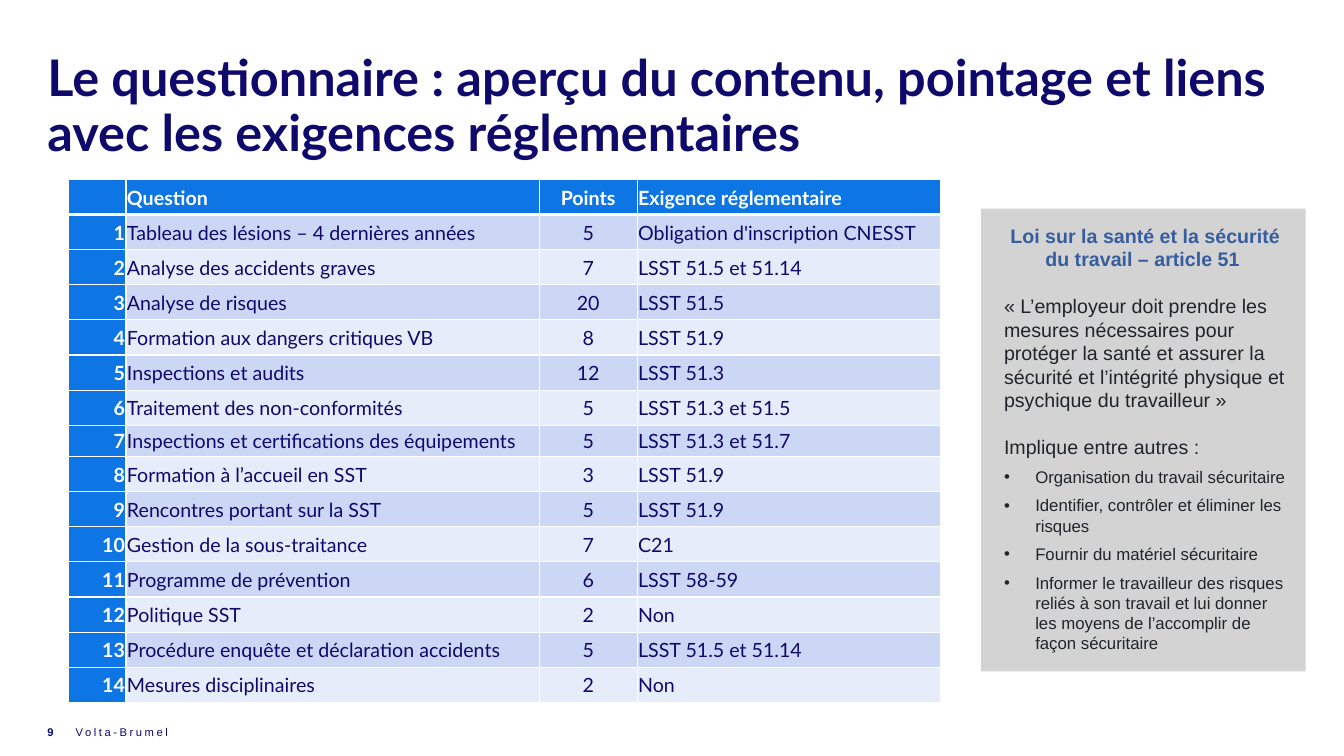
from dataclasses import dataclass
from typing import NamedTuple

from lxml import etree
from pptx import Presentation
from pptx.dml.color import RGBColor
from pptx.enum.shapes import MSO_SHAPE
from pptx.enum.text import MSO_ANCHOR, PP_ALIGN
from pptx.oxml.ns import qn
from pptx.util import Inches, Pt

NAVY = RGBColor(0x0F, 0x09, 0x6C)
BLUE = RGBColor(0x0E, 0x75, 0xE5)
BAND_DARK = RGBColor(0xCC, 0xD6, 0xF5)
BAND_LIGHT = RGBColor(0xE7, 0xEC, 0xFA)
WHITE = RGBColor(0xFF, 0xFF, 0xFF)
GREY = RGBColor(0xD3, 0xD3, 0xD3)
LAW_BLUE = RGBColor(0x37, 0x5D, 0x9D)
INK = RGBColor(0x21, 0x25, 0x29)
LEFT, CENTER, RIGHT = PP_ALIGN.LEFT, PP_ALIGN.CENTER, PP_ALIGN.RIGHT
TOP, MIDDLE = MSO_ANCHOR.TOP, MSO_ANCHOR.MIDDLE
RECTANGLE = MSO_SHAPE.RECTANGLE


class Question(NamedTuple):
    title: str
    points: int
    requirement: str


@dataclass
class Style:
    size: float
    color: RGBColor
    font: str = "Arial"
    bold: bool = False
    align: PP_ALIGN = LEFT
    space_before: float = 0
    bullet: bool = False


class Passage(NamedTuple):
    text: str
    style: Style


HEADINGS = ("", "Question", "Points", "Exigence réglementaire")
COLUMN_WIDTHS = (0.57, 4.1, 0.97, 3.01)
COLUMN_ALIGNS = (RIGHT, LEFT, CENTER, LEFT)
TABLE_HEIGHT = 5.19
SHORT_ROW, SHORT_HEIGHT = 7, 0.31
QUESTIONS = [
    Question("Tableau des lésions – 4 dernières années", 5, "Obligation d'inscription CNESST"),
    Question("Analyse des accidents graves", 7, "LSST 51.5 et 51.14"),
    Question("Analyse de risques", 20, "LSST 51.5"),
    Question("Formation aux dangers critiques VB", 8, "LSST 51.9"),
    Question("Inspections et audits", 12, "LSST 51.3"),
    Question("Traitement des non-conformités", 5, "LSST 51.3 et 51.5"),
    Question("Inspections et certifications des équipements", 5, "LSST 51.3 et 51.7"),
    Question("Formation à l’accueil en SST", 3, "LSST 51.9"),
    Question("Rencontres portant sur la SST", 5, "LSST 51.9"),
    Question("Gestion de la sous-traitance", 7, "C21"),
    Question("Programme de prévention", 6, "LSST 58-59"),
    Question("Politique SST", 2, "Non"),
    Question("Procédure enquête et déclaration accidents", 5, "LSST 51.5 et 51.14"),
    Question("Mesures disciplinaires", 2, "Non"),
]

LAW_TITLE = Style(14, LAW_BLUE, bold=True, align=CENTER)
LAW_BODY = Style(14, INK, space_before=16.5)
LAW_BULLET = Style(12, INK, space_before=6, bullet=True)
LAW_PASSAGES = [
    Passage("Loi sur la santé et la sécurité du travail – article 51 ", LAW_TITLE),
    Passage("« L’employeur doit prendre les mesures nécessaires pour protéger la santé "
            "et assurer la sécurité et l’intégrité physique et psychique du travailleur »",
            LAW_BODY),
    Passage("Implique entre autres :", LAW_BODY),
    Passage("Organisation du travail sécuritaire", LAW_BULLET),
    Passage("Identifier, contrôler et éliminer les risques", LAW_BULLET),
    Passage("Fournir du matériel sécuritaire", LAW_BULLET),
    Passage("Informer le travailleur des risques reliés à son travail et lui donner "
            "les moyens de l’accomplir de façon sécuritaire", LAW_BULLET),
]


def write(paragraph, text: str, style: Style) -> None:
    if style.bullet:
        properties = paragraph._p.get_or_add_pPr()
        properties.set("marL", str(Inches(0.31)))
        properties.set("indent", str(-Inches(0.31)))
        etree.SubElement(properties, qn("a:buFont"), typeface="Arial")
        etree.SubElement(properties, qn("a:buChar"), char="•")
    if text:
        paragraph.add_run().text = text
    paragraph.alignment = style.align
    if style.space_before:
        paragraph.space_before = Pt(style.space_before)
    font = paragraph.font
    font.name, font.size, font.bold = style.font, Pt(style.size), style.bold
    font.color.rgb = style.color


def add_text(slide, left: float, top: float, width: float, height: float,
             passages: list[Passage], anchor: MSO_ANCHOR = TOP, inset: bool = False):
    box = slide.shapes.add_textbox(Inches(left), Inches(top), Inches(width), Inches(height))
    frame = box.text_frame
    frame.word_wrap = True
    frame.vertical_anchor = anchor
    if not inset:
        frame.margin_left = frame.margin_top = frame.margin_right = frame.margin_bottom = 0
    for index, passage in enumerate(passages):
        paragraph = frame.add_paragraph() if index else frame.paragraphs[0]
        write(paragraph, passage.text, passage.style)
    return frame


def set_borders(cell, top: float, bottom: float) -> None:
    properties = cell._tc.get_or_add_tcPr()
    for side, points in (("L", 1), ("R", 1), ("T", top), ("B", bottom)):
        line = etree.SubElement(properties, qn(f"a:ln{side}"), w=str(Pt(points)))
        fill = etree.SubElement(line, qn("a:solidFill"))
        etree.SubElement(fill, qn("a:srgbClr"), val=str(WHITE))


def add_questions(slide) -> None:
    rows = [HEADINGS]
    rows += [(str(number), question.title, str(question.points), question.requirement)
             for number, question in enumerate(QUESTIONS, 1)]
    table = slide.shapes.add_table(len(rows), len(HEADINGS), Inches(0.68), Inches(1.78),
                                   Inches(sum(COLUMN_WIDTHS)), Inches(TABLE_HEIGHT)).table
    table.first_row = table.horz_banding = False
    for column, width in zip(table.columns, COLUMN_WIDTHS):
        column.width = Inches(width)
    row_height = (TABLE_HEIGHT - SHORT_HEIGHT) / (len(rows) - 1)
    for r, texts in enumerate(rows):
        table.rows[r].height = Inches(SHORT_HEIGHT if r == SHORT_ROW else row_height)
        for c, text in enumerate(texts):
            cell = table.cell(r, c)
            heading = r == 0 or c == 0
            set_borders(cell, top=3 if r == 1 else 1, bottom=3 if r == 0 else 1)
            cell.fill.solid()
            cell.fill.fore_color.rgb = BLUE if heading else BAND_DARK if r % 2 else BAND_LIGHT
            cell.margin_left = cell.margin_top = cell.margin_right = Inches(0.01)
            cell.margin_bottom = 0
            cell.vertical_anchor = MIDDLE
            write(cell.text_frame.paragraphs[0], text,
                  Style(14, WHITE if heading else NAVY, "Lato", heading, COLUMN_ALIGNS[c]))


def add_law_panel(slide) -> None:
    panel = slide.shapes.add_shape(RECTANGLE, Inches(9.73), Inches(2.07),
                                   Inches(3.22), Inches(4.59))
    panel.shadow.inherit = False
    panel.fill.solid()
    panel.fill.fore_color.rgb = GREY
    panel.line.fill.background()
    add_text(slide, 9.86, 2.17, 3, 4.41, LAW_PASSAGES, inset=True)


def main() -> None:
    deck = Presentation()
    deck.slide_width, deck.slide_height = Inches(13.33), Inches(7.5)
    slide = deck.slides.add_slide(deck.slide_layouts[6])

    # Footer
    add_text(slide, 0.47, 7.14, 0.28, 0.24, [Passage("9", Style(8, NAVY, bold=True))], MIDDLE)
    owner = add_text(slide, 0.75, 7.14, 9.45, 0.24,
                     [Passage("Volta-Brumel", Style(8, NAVY))], MIDDLE)
    owner.paragraphs[0].runs[0]._r.get_or_add_rPr().set("spc", "180")

    # Title
    title = add_text(slide, 0.47, 0.53, 12.39, 0.55, [Passage(
        "Le questionnaire : aperçu du contenu, pointage et liens avec les exigences "
        "réglementaires", Style(36, NAVY, "Lato", True))])
    title.paragraphs[0].line_spacing = 0.9

    # Questions and the law behind them
    add_law_panel(slide)
    add_questions(slide)

    deck.save("out.pptx")


if __name__ == "__main__":
    main()
